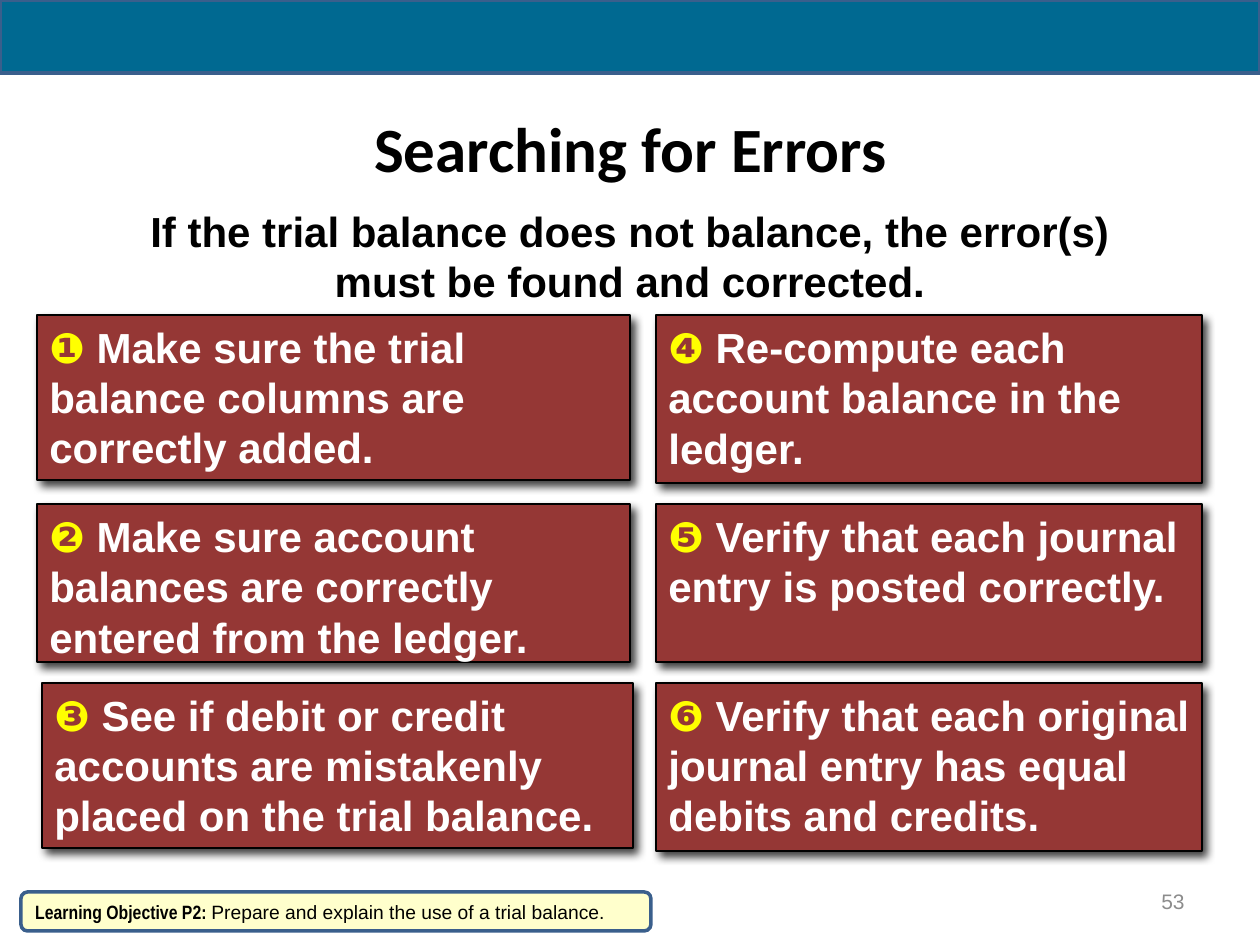
"""Build the slide on searching for errors in a trial balance."""
from lxml import etree
from pptx import Presentation
from pptx import util as u
from pptx.dml.color import RGBColor
from pptx.enum import shapes, text
from pptx.oxml.ns import qn

PX = 914400 / 126
COLORS = {
    "black": "000000", "white": "FFFFFF", "yellow": "FFFF00", "gray": "8C8C8C",
    "brick": "953735", "teal": "006991", "navy": "3A5F8C", "cream": "FFFFCC",
}
COLUMNS = [
    [
        ("❶", "Make sure the trial balance columns are correctly added.", 37, 315, 593, 165),
        ("❷", "Make sure account balances are correctly entered from the ledger.", 37, 504, 593, 158),
        ("❸", "See if debit or credit accounts are mistakenly placed on the trial balance.", 42, 683, 591, 165),
    ],
    [
        ("❹", "Re-compute each account balance in the ledger.", 656, 315, 546, 168),
        ("❺", "Verify that each journal entry is posted correctly.", 656, 504, 546, 158),
        ("❻", "Verify that each original journal entry has equal debits and credits.", 656, 683, 546, 168),
    ],
]


def add_box(kind, box, fill=None, line=None, width=1):
    left, top, box_width, height = [u.Emu(round(value * PX)) for value in box]
    if kind is None:
        shape = slide.shapes.add_textbox(left, top, box_width, height)
    else:
        shape = slide.shapes.add_shape(kind, left, top, box_width, height)
        shape.shadow.inherit = False
        shape.fill.solid()
        shape.fill.fore_color.rgb = RGBColor.from_string(COLORS[fill])
        shape.line.color.rgb = RGBColor.from_string(COLORS[line])
        shape.line.width = u.Pt(width)
    shape.text_frame.word_wrap = True
    return shape


def write(shape, runs, size, font, bold, align, anchor):
    shape.text_frame.vertical_anchor = anchor
    paragraph = shape.text_frame.paragraphs[0]
    paragraph.alignment = align
    paragraph.font.size = u.Pt(size)
    paragraph.font.name = font
    paragraph.font.bold = bold
    for words, color in runs:
        run = paragraph.add_run()
        run.text = words
        run.font.color.rgb = RGBColor.from_string(COLORS[color])
    return paragraph


presentation = Presentation()
presentation.slide_width, presentation.slide_height = u.Inches(10), u.Inches(7.5)
slide = presentation.slides.add_slide(presentation.slide_layouts[6])
rectangle = shapes.MSO_SHAPE.RECTANGLE
align, anchor = text.PP_ALIGN, text.MSO_ANCHOR

title = add_box(None, (158, 95, 945, 105))
write(title, [("Searching for Errors", "black")], 36, "Calibri", True, align.CENTER, anchor.MIDDLE)

number = add_box(None, (903, 876, 294, 50))
write(number, [("53", "gray")], 12, "Arial", False, align.RIGHT, anchor.MIDDLE)

intro = add_box(None, (126, 199, 1008, 115))
sentence = "If the trial balance does not balance, the error(s) must be found and corrected."
paragraph = write(intro, [(sentence, "black")], 24, "Arial", True, align.CENTER, anchor.TOP)
paragraph.line_spacing = u.Pt(28.8)

for column in COLUMNS:
    for numeral, step, *box in column:
        card = add_box(rectangle, box, "brick", "black")
        runs = [(f"{numeral} ", "yellow"), (step, "white")]
        paragraph = write(card, runs, 24, "Arial", True, align.LEFT, anchor.TOP)
        paragraph.line_spacing = u.Pt(28.8)
        effects = card.element.spPr.find(qn("a:effectLst"))
        shadow = etree.SubElement(
            effects, qn("a:outerShdw"), blurRad=str(u.Pt(5)), dist=str(u.Pt(3.7)),
            dir=str(55 * 60000), algn="tl", rotWithShape="0")
        color = etree.SubElement(shadow, qn("a:srgbClr"), val=COLORS["black"])
        etree.SubElement(color, qn("a:alpha"), val="75000")

add_box(rectangle, (0, 0, 1260, 73), "teal", "navy", 2)

objective = add_box(shapes.MSO_SHAPE.ROUNDED_RECTANGLE, (21, 892, 630, 39), "cream", "navy", 2)
runs = [("Learning Objective P2: ", "black"),
        ("Prepare and explain the use of a trial balance.", "black")]
paragraph = write(objective, runs, 11, "Arial", False, align.LEFT, anchor.MIDDLE)
label = paragraph.runs[0]
label.font.name = "Arial Narrow"
label.font.bold = True

presentation.save("out.pptx")
